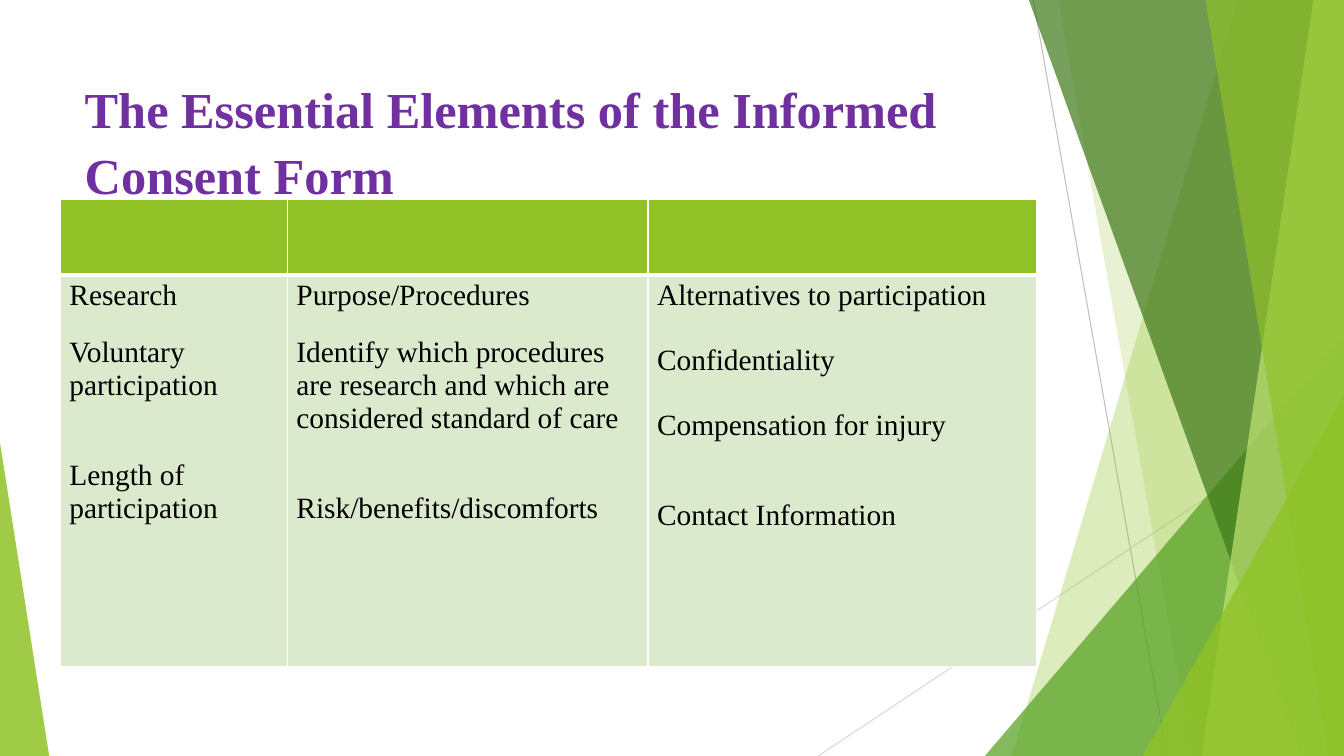
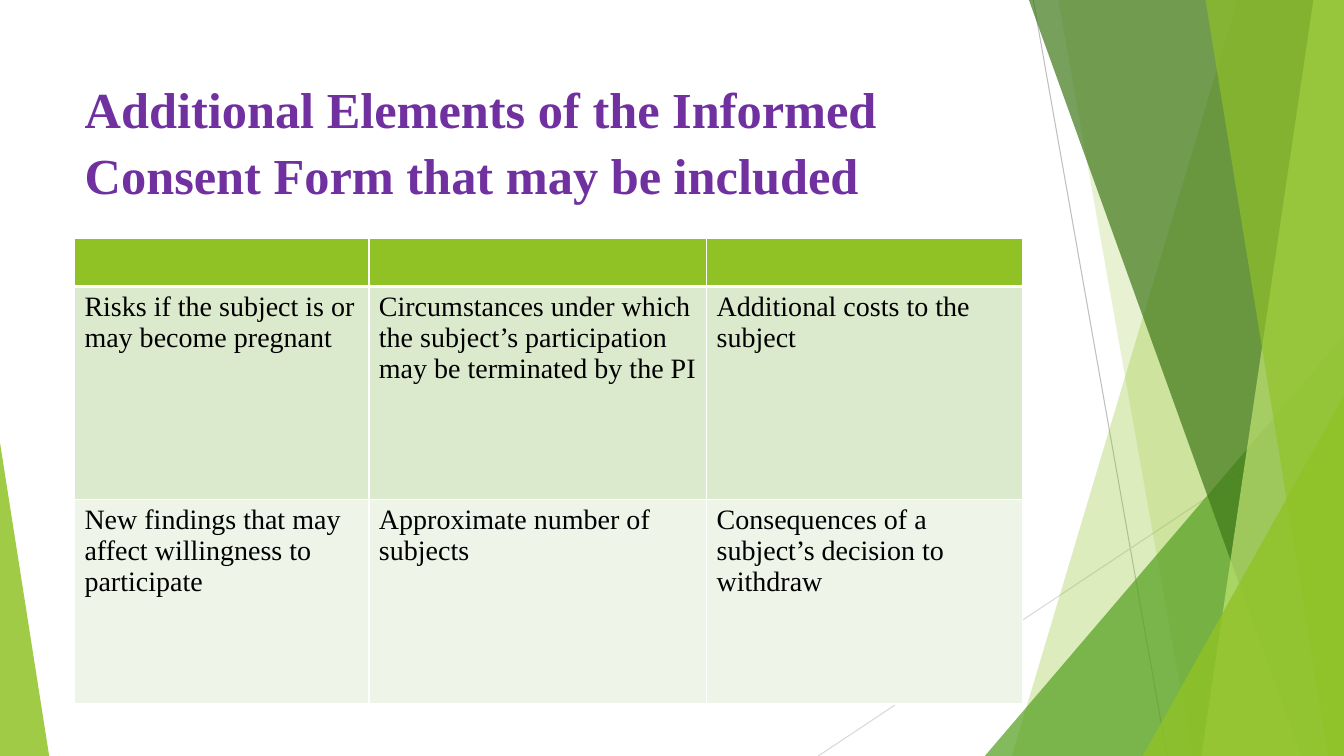
from typing import NamedTuple

from lxml.etree import SubElement
from pptx import Presentation
from pptx.dml.color import RGBColor
from pptx.enum.shapes import MSO_CONNECTOR, MSO_SHAPE
from pptx.enum.text import MSO_ANCHOR, MSO_AUTO_SIZE, PP_ALIGN
from pptx.oxml.ns import qn
from pptx.shapes.shapetree import SlideShapes
from pptx.util import Cm, Pt

WIDTH, HEIGHT = 33.87, 19.05  # cm
FONT = "Times New Roman"

WHITE = RGBColor(0xFF, 0xFF, 0xFF)
BLACK = RGBColor(0x00, 0x00, 0x00)
PURPLE = RGBColor(0x70, 0x30, 0xA0)
LIME = RGBColor(0x90, 0xC2, 0x26)
PALE_LIME = RGBColor(0xC0, 0xE4, 0x74)
GREEN = RGBColor(0x54, 0xA0, 0x21)
DARK_GREEN = RGBColor(0x3F, 0x78, 0x19)
GREY = RGBColor(0xBF, 0xBF, 0xBF)
LIGHT_GREY = RGBColor(0xD9, 0xD9, 0xD9)
BANDS = (RGBColor(0xDB, 0xE9, 0xCD), RGBColor(0xEE, 0xF4, 0xE8))


class Hairline(NamedTuple):
    x1: float
    y1: float
    x2: float
    y2: float
    color: RGBColor


class Ribbon(NamedTuple):
    """Full-height band from a slanted left edge to the right of the slide."""
    top_x: float
    bottom_x: float
    color: RGBColor
    opacity: int


class Wedge(NamedTuple):
    """Right-angled triangle standing on the bottom of the slide."""
    left: float
    top: float
    width: float
    apex: float
    color: RGBColor
    opacity: int


class Item(NamedTuple):
    text: str
    gap: float = 0  # points above


class TableSpec(NamedTuple):
    left: float
    top: float
    cols: tuple[float, ...]
    rows: tuple[float, ...]
    margins: tuple[float, float]
    size: int
    body: list[list[list[Item]]]


HAIRLINES = (
    Hairline(26.04, 0, 29.41, HEIGHT, GREY),
    Hairline(WIDTH, 10.24, 20.62, HEIGHT, LIGHT_GREY),
)
FACETS = (
    Ribbon(31.19, 25.5, LIME, 30),
    Ribbon(26.67, 30.05, LIME, 20),
    Wedge(24.82, 8.46, WIDTH - 24.82, 1, GREEN, 72),
    Ribbon(25.93, 32.79, DARK_GREEN, 70),
    Ribbon(33.1, 30.28, PALE_LIME, 70),
    Ribbon(30.38, 33.48, LIME, 65),
    Wedge(28.8, 9.98, WIDTH - 28.8, 1, LIME, 80),
    Wedge(0, 11.15, 1.24, 0, LIME, 85),
)

SMALL_GAP, GAP, LARGE_GAP = 17.7, 23.2, 41

ESSENTIAL = TableSpec(
    1.52, 5.03, (5.72, 9.09, 9.8), (1.9, 9.86), (0.23, 0.11), 21,
    [[
        [Item("Research"),
         Item("Voluntary participation", SMALL_GAP),
         Item("Length of participation", LARGE_GAP)],
        [Item("Purpose/Procedures"),
         Item("Identify which procedures are research and which are "
              "considered standard of care", SMALL_GAP),
         Item("Risk/benefits/discomforts", LARGE_GAP)],
        [Item("Alternatives to participation"),
         Item("Confidentiality", GAP),
         Item("Compensation for injury", GAP),
         Item("Contact Information", LARGE_GAP)],
    ]],
)
ADDITIONAL = TableSpec(
    1.88, 6, (7.42, 8.51, 7.95), (1.22, 5.36, 5.16), (0.25, 0.13), 20,
    [
        [[Item("Risks if the subject is or may become pregnant")],
         [Item("Circumstances under which the subject’s participation "
               "may be terminated by the PI")],
         [Item("Additional costs to the subject")]],
        [[Item("New findings that may affect willingness to participate")],
         [Item("Approximate number of subjects")],
         [Item("Consequences of a subject’s decision to withdraw")]],
    ],
)
SLIDES = (
    ("The Essential Elements of the Informed Consent Form", ESSENTIAL),
    ("Additional Elements of the Informed Consent Form that may be included",
     ADDITIONAL),
)


def draw_hairline(shapes: SlideShapes, line: Hairline) -> None:
    cx = shapes.add_connector(MSO_CONNECTOR.STRAIGHT, Cm(line.x1), Cm(line.y1),
                              Cm(line.x2), Cm(line.y2))
    cx.line.color.rgb = line.color
    cx.line.width = Pt(0.75)
    SubElement(cx.element.spPr, qn("a:effectLst"))


def draw_facet(shapes: SlideShapes, facet: Ribbon | Wedge) -> None:
    if isinstance(facet, Ribbon):
        outline = shapes.build_freeform(Cm(facet.top_x), 0)
        outline.add_line_segments([(Cm(WIDTH), 0), (Cm(WIDTH), Cm(HEIGHT)),
                                   (Cm(facet.bottom_x), Cm(HEIGHT))])
        sp = outline.convert_to_shape()
    else:
        sp = shapes.add_shape(MSO_SHAPE.ISOSCELES_TRIANGLE, Cm(facet.left),
                              Cm(facet.top), Cm(facet.width),
                              Cm(HEIGHT - facet.top))
        sp.adjustments[0] = facet.apex
    sp.shadow.inherit = False
    sp.line.fill.background()
    sp.fill.solid()
    sp.fill.fore_color.rgb = facet.color
    color = next(sp.element.spPr.iter(qn("a:srgbClr")))
    SubElement(color, qn("a:alpha"), val=str(facet.opacity * 1000))


def decorate(layout) -> None:
    """Draw the shared backdrop on the layout, so every slide inherits it."""
    shapes = SlideShapes(layout.shapes.element, layout)
    for line in HAIRLINES:
        draw_hairline(shapes, line)
    for facet in FACETS:
        draw_facet(shapes, facet)


def set_title(slide, text: str) -> None:
    title = slide.shapes.title
    title.left, title.top = Cm(1.88), Cm(1.7)
    title.width, title.height = Cm(23.88), Cm(3.58)
    tf = title.text_frame
    tf.text = text
    tf.word_wrap = True
    tf.auto_size = MSO_AUTO_SIZE.NONE
    tf.vertical_anchor = MSO_ANCHOR.TOP
    p = tf.paragraphs[0]
    p.alignment = PP_ALIGN.LEFT
    p.line_spacing = 1.09
    p.font.name, p.font.size, p.font.bold = FONT, Pt(36), True
    p.font.color.rgb = PURPLE


def style_cell(cell, fill: RGBColor, top: int = 1, bottom: int = 1) -> None:
    """Give a cell its fill and white borders (widths in points)."""
    tc_pr = cell._tc.get_or_add_tcPr()
    for side, width in (("L", 1), ("R", 1), ("T", top), ("B", bottom)):
        ln = SubElement(tc_pr, qn(f"a:ln{side}"), w=str(Pt(width)))
        solid = SubElement(ln, qn("a:solidFill"))
        SubElement(solid, qn("a:srgbClr"), val=str(WHITE))
    cell.fill.solid()
    cell.fill.fore_color.rgb = fill


def fill_cell(cell, items: list[Item], spec: TableSpec) -> None:
    cell.margin_left = cell.margin_right = Cm(spec.margins[0])
    cell.margin_top = cell.margin_bottom = Cm(spec.margins[1])
    tf = cell.text_frame
    tf.text = "\n".join(item.text for item in items)
    for p, item in zip(tf.paragraphs, items):
        p.space_before = Pt(item.gap)
        p.font.name, p.font.size = FONT, Pt(spec.size)
        p.font.color.rgb = BLACK


def draw_table(slide, spec: TableSpec) -> None:
    table = slide.shapes.add_table(
        len(spec.rows), len(spec.cols), Cm(spec.left), Cm(spec.top),
        Cm(sum(spec.cols)), Cm(sum(spec.rows))).table
    table.first_row = table.horz_banding = False
    for col, width in zip(table.columns, spec.cols):
        col.width = Cm(width)
    for row, height in zip(table.rows, spec.rows):
        row.height = Cm(height)
    for c in range(len(spec.cols)):
        style_cell(table.cell(0, c), LIME, bottom=3)
    for r, cells in enumerate(spec.body, start=1):
        for c, items in enumerate(cells):
            cell = table.cell(r, c)
            style_cell(cell, BANDS[(r - 1) % 2], top=3 if r == 1 else 1)
            fill_cell(cell, items, spec)


def main() -> None:
    prs = Presentation()
    prs.slide_width, prs.slide_height = Cm(WIDTH), Cm(HEIGHT)
    layout = prs.slide_layouts.get_by_name("Title Only")
    decorate(layout)
    for title, spec in SLIDES:
        slide = prs.slides.add_slide(layout)
        set_title(slide, title)
        draw_table(slide, spec)
    prs.save("out.pptx")


if __name__ == "__main__":
    main()
